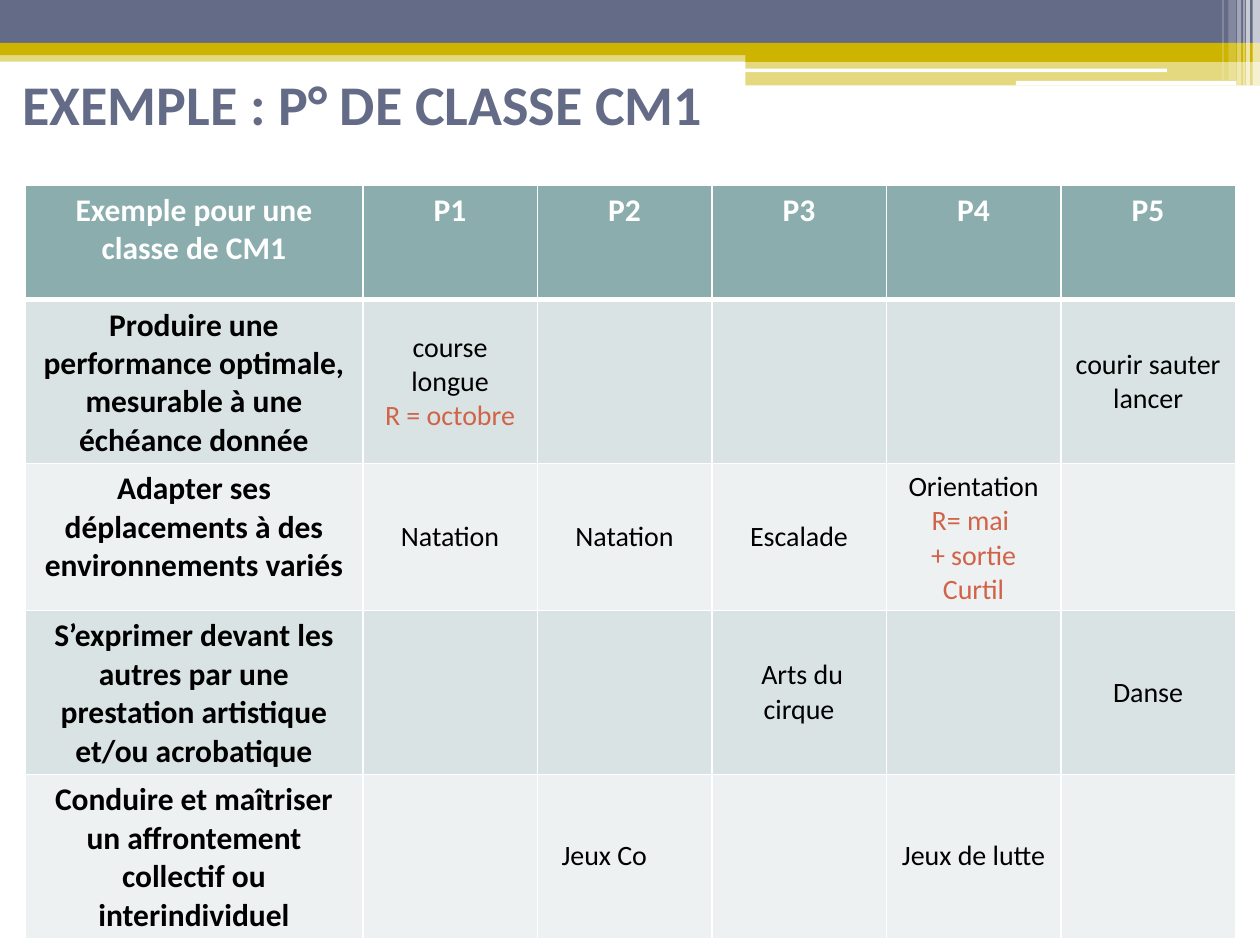
import dataclasses
import typing

import lxml.etree
import pptx
import pptx.dml.color
import pptx.enum.shapes
import pptx.enum.text
import pptx.oxml.ns
import pptx.util

Pt = pptx.util.Pt
RGBColor = pptx.dml.color.RGBColor
Shapes = pptx.enum.shapes.MSO_SHAPE
Anchor = pptx.enum.text.MSO_ANCHOR
Align = pptx.enum.text.PP_ALIGN
qn = pptx.oxml.ns.qn

FONT = "Calibri"
SLATE = RGBColor(0x64, 0x6B, 0x86)
GOLD = RGBColor(0xCC, 0xB4, 0x00)
WHITE = RGBColor(0xFF, 0xFF, 0xFF)
BLACK = RGBColor(0x00, 0x00, 0x00)
RED = RGBColor(0xD1, 0x63, 0x49)
TEAL = RGBColor(0x8C, 0xAD, 0xAE)
BAND_DARK = RGBColor(0xDA, 0xE3, 0xE3)
BAND_LIGHT = RGBColor(0xEE, 0xF1, 0xF2)


@dataclasses.dataclass(frozen=True)
class Bar:
    left: float
    top: float
    width: float
    height: float
    color: RGBColor
    opacity: int = 100
    rounded: bool = False


@dataclasses.dataclass(frozen=True)
class Activity:
    text: str
    note: str = ""


@dataclasses.dataclass(frozen=True)
class Goal:
    title: str
    height: float
    activities: dict[int, Activity]


BARS = [
    Bar(0, 28.8, 720, 6.5, GOLD, 50),
    Bar(0, 0, 720, 24.5, SLATE),
    Bar(0, 24.5, 720, 7, GOLD),
    Bar(426, 28.2, 294, 7.2, GOLD),
    Bar(426, 34.6, 294, 14.2, GOLD, 50),
    Bar(425.6, 39.2, 241.2, 2, WHITE, rounded=True),
    Bar(580.5, 46.2, 126, 2.6, WHITE, rounded=True),
    Bar(715.8, 0, 4.2, 48.8, WHITE, 65),
    Bar(712, 0, 2.2, 48.8, WHITE, 65),
    Bar(710.5, 0, 0.7, 48.8, WHITE, 60),
    Bar(707, 0, 2.2, 48.8, WHITE, 40),
    Bar(702, 0, 4.3, 46, WHITE, 20),
    Bar(698.5, 0, 0.7, 46, WHITE, 30),
]

PERIODS = 5
HEADER_HEIGHT = 65.5
GOAL_WIDTH = 192.9
PERIOD_WIDTH = 99.75
GOALS = [
    Goal("Produire une performance optimale, mesurable à une échéance donnée", 72.7,
         {1: Activity("course longue", "R = octobre"), 5: Activity("courir sauter lancer")}),
    Goal("Adapter ses déplacements à des environnements variés", 69.8,
         {1: Activity("Natation"), 2: Activity("Natation"), 3: Activity("Escalade"),
          4: Activity("Orientation", "R= mai \n+ sortie Curtil")}),
    Goal("S’exprimer devant les autres par une prestation artistique et/ou acrobatique", 80.6,
         {3: Activity(" Arts du cirque"), 5: Activity("Danse")}),
    Goal("Conduire et maîtriser un affrontement collectif ou interindividuel", 64.1,
         {2: Activity("Jeux Co\t"), 4: Activity("Jeux de lutte")}),
]


def draw_bar(page: typing.Any, bar: Bar) -> None:
    kind = Shapes.ROUNDED_RECTANGLE if bar.rounded else Shapes.RECTANGLE
    shape = page.shapes.add_shape(
        kind, Pt(bar.left), Pt(bar.top), Pt(bar.width), Pt(bar.height))
    shape.shadow.inherit = False
    shape.line.fill.background()
    shape.fill.solid()
    shape.fill.fore_color.rgb = bar.color
    if bar.opacity < 100:
        color = shape.fill._xPr.find(qn("a:solidFill"))[0]
        lxml.etree.SubElement(color, qn("a:alpha"), val=str(bar.opacity * 1000))


def format_paragraph(para: typing.Any, size: float, color: RGBColor, bold: bool) -> None:
    for span in para.runs:
        span.font.name = FONT
        span.font.size = Pt(size)
        span.font.bold = bold
        span.font.color.rgb = color


def draw_title(page: typing.Any, text: str) -> None:
    box = page.shapes.add_textbox(Pt(5.8), Pt(25.9), Pt(427.7), Pt(66.2))
    box.text_frame.word_wrap = True
    box.text_frame.vertical_anchor = Anchor.MIDDLE
    box.text_frame.text = text
    format_paragraph(box.text_frame.paragraphs[0], 32, SLATE, True)


def style_cell(cell: typing.Any, fill: RGBColor, top: float, bottom: float) -> None:
    cell.fill.solid()
    cell.fill.fore_color.rgb = fill
    properties = cell._tc.get_or_add_tcPr()
    widths = {"a:lnL": 1, "a:lnR": 1, "a:lnT": top, "a:lnB": bottom}
    for position, (tag, width) in enumerate(widths.items()):
        line = lxml.etree.Element(qn(tag), w=str(int(Pt(width))))
        solid = lxml.etree.SubElement(line, qn("a:solidFill"))
        lxml.etree.SubElement(solid, qn("a:srgbClr"), val=str(WHITE))
        properties.insert(position, line)


def write_cell(cell: typing.Any, text: str, size: float, color: RGBColor,
               bold: bool, note: str = "") -> None:
    cell.text_frame.text = f"{text}\n{note}" if note else text
    for index, para in enumerate(cell.text_frame.paragraphs):
        para.alignment = Align.CENTER
        format_paragraph(para, size, RED if index else color, bold)


def draw_table(page: typing.Any) -> None:
    heights = [HEADER_HEIGHT] + [goal.height for goal in GOALS]
    widths = [GOAL_WIDTH] + [PERIOD_WIDTH] * PERIODS
    table = page.shapes.add_table(
        len(heights), len(widths), Pt(14.4), Pt(105.8),
        Pt(sum(widths)), Pt(sum(heights))).table
    for column, width in zip(table.columns, widths):
        column.width = Pt(width)
    for row, height in zip(table.rows, heights):
        row.height = Pt(height)

    headings = ["Exemple pour une classe de CM1"]
    headings += [f"P{number}" for number in range(1, PERIODS + 1)]
    for column, heading in enumerate(headings):
        cell = table.cell(0, column)
        style_cell(cell, TEAL, 1, 3)
        write_cell(cell, heading, 18, WHITE, True)

    for row, goal in enumerate(GOALS, start=1):
        for column in range(PERIODS + 1):
            style_cell(table.cell(row, column), BAND_DARK if row % 2 else BAND_LIGHT,
                       3 if row == 1 else 1, 1)
        write_cell(table.cell(row, 0), goal.title, 18, BLACK, True)
        for period, activity in goal.activities.items():
            cell = table.cell(row, period)
            cell.vertical_anchor = Anchor.MIDDLE
            write_cell(cell, activity.text, 16, BLACK, False, activity.note)


def main() -> None:
    deck = pptx.Presentation()
    deck.slide_width = Pt(720)
    deck.slide_height = Pt(540)
    page = deck.slides.add_slide(deck.slide_layouts[6])
    for bar in BARS:
        draw_bar(page, bar)
    draw_title(page, "EXEMPLE : P° DE CLASSE CM1")
    draw_table(page)
    deck.save("out.pptx")


if __name__ == "__main__":
    main()
